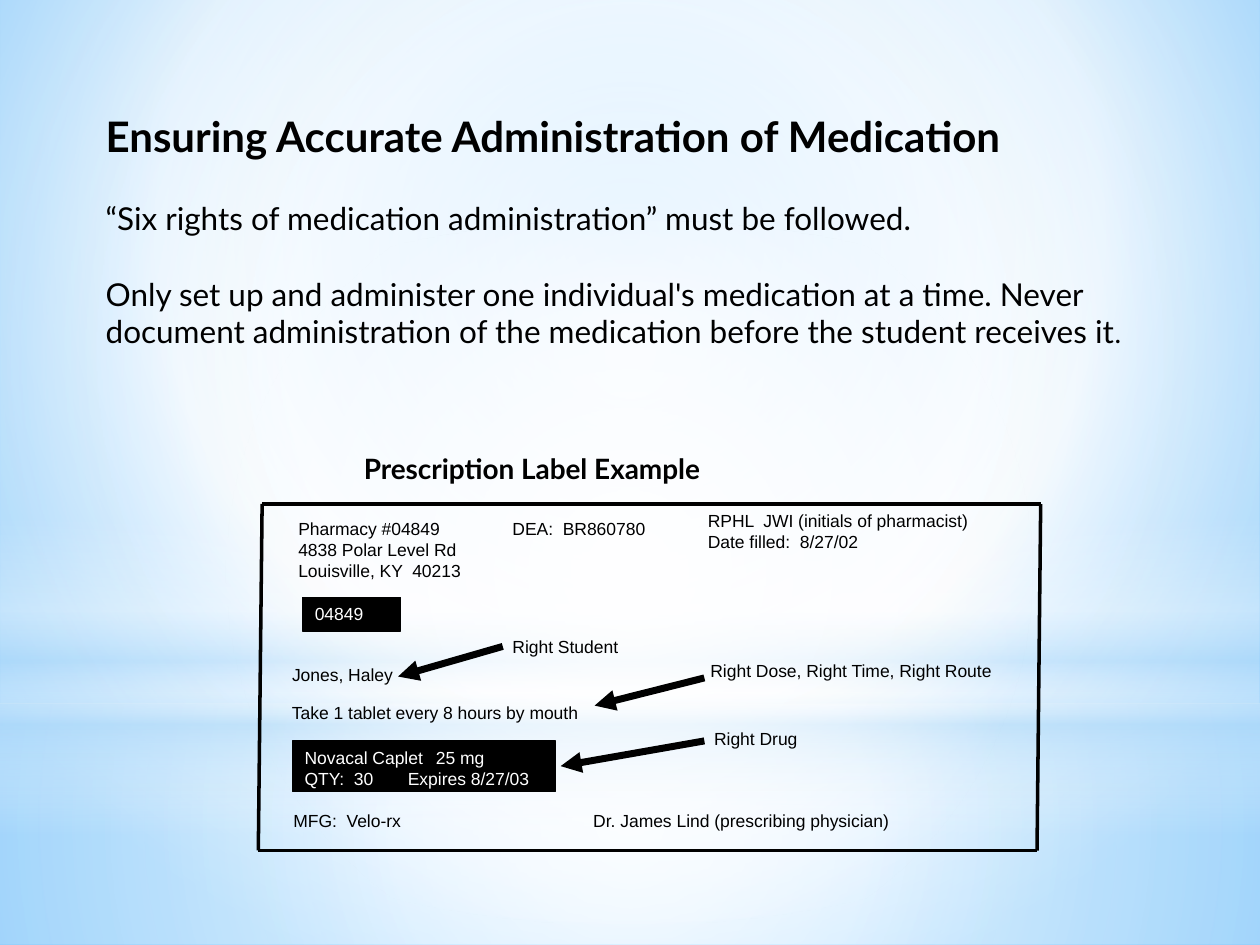
from lxml.etree import SubElement as Sub
from pptx import Presentation
from pptx.dml.color import RGBColor
from pptx.enum.shapes import MSO_CONNECTOR as Connector, MSO_SHAPE as Preset
from pptx.enum.text import MSO_ANCHOR as Anchor, PP_ALIGN as Align
from pptx.oxml.ns import qn
from pptx.util import Pt

rgb = RGBColor.from_string


def blend(owner, stops, focus=None):
    gradient = owner.find(".//" + qn("a:gradFill"))
    for child in list(gradient):
        gradient.remove(child)
    stop_list = Sub(gradient, qn("a:gsLst"))
    for position, color, opacity in stops:
        stop = Sub(stop_list, qn("a:gs"), pos=str(position * 1000))
        tint = Sub(stop, qn("a:srgbClr"), val=color)
        if opacity < 100:
            Sub(tint, qn("a:alpha"), val=str(opacity * 1000))
    if focus:
        circle = Sub(gradient, qn("a:path"), path="circle")
        edges = {side: str(share * 1000) for side, share in zip("ltrb", focus)}
        Sub(circle, qn("a:fillToRect"), **edges)
    else:
        Sub(gradient, qn("a:lin"), ang="5400000", scaled="0")


def write(holder, paragraphs, font="Arial", color="000000"):
    frame = holder.text_frame
    frame.word_wrap = True
    frame.vertical_anchor = Anchor.TOP
    for index, (space, runs) in enumerate(paragraphs):
        paragraph = frame.add_paragraph() if index else frame.paragraphs[0]
        paragraph.alignment = Align.LEFT
        paragraph.space_before = Pt(space)
        for words, size, bold in runs:
            run = paragraph.add_run()
            run.text = words
            run.font.name = font
            run.font.size = Pt(size)
            run.font.bold = bold
            run.font.color.rgb = rgb(color)


prs = Presentation()
prs.slide_width, prs.slide_height = Pt(720), Pt(540)
slide = prs.slides.add_slide(prs.slide_layouts[6])
shapes = slide.shapes

slide.background.fill.gradient()
blend(slide.element, [(0, "9ED5FF", 100), (60, "FFFFFF", 100), (100, "5BB9FF", 100)],
      (20, 10, 20, 60))

center = (50, 50, 50, 50)
glows = [
    (Preset.RECTANGLE, 401.8, 138.2, center,
     [(0, "FFFFFF", 91), (37, "FFFFFF", 76), (100, "B4DCFA", 79)]),
    (Preset.RECTANGLE, 0, 401.8, center,
     [(0, "FFFFFF", 89), (48, "FFFFFF", 62), (100, "B4DCFA", 79)]),
    (Preset.RECTANGLE, 296.6, 180, None,
     [(0, "FFFFFF", 0), (29, "FFFFFF", 30), (45, "B4DCFA", 40),
      (55, "FFFFFF", 26), (65, "B4DCFA", 60), (100, "FFFFFF", 0)]),
    (Preset.OVAL, 126, 401.8, center, [(0, "FFFFFF", 100), (56, "FFFFFF", 0)]),
]
for preset, top, height, focus, stops in glows:
    glow = shapes.add_shape(preset, 0, Pt(top), Pt(720), Pt(height))
    glow.shadow.inherit = False
    glow.line.fill.background()
    glow.fill.gradient()
    blend(glow.element, stops, focus)

message = shapes.add_textbox(Pt(53.3), Pt(59.8), Pt(650), Pt(150))
write(message, [
    (0, [("Ensuring Accurate Administration of Medication", 24, True)]),
    (21.6, [("“Six rights of medication administration” must be followed.", 18, False)]),
    (21.6, [("Only set up and administer one individual's medication at a time. "
             "Never document administration of the medication before the student "
             "receives it", 18, False), (".", 16, False)]),
], "Lato")
label_heading = shapes.add_textbox(Pt(200.8), Pt(254.2), Pt(300), Pt(27))
write(label_heading, [(0, [("Prescription Label Example", 16, True)])], "Lato")

top_left, top_right = (149.8, 288), (594.7, 288)
bottom_left, bottom_right = (147.6, 486), (592.6, 486)
strokes = [
    (bottom_left, bottom_right, 2),
    (top_left, bottom_left, 2),
    (top_left, top_right, 2),
    (top_right, bottom_right, 2),
    ((287.3, 369.4), (227.5, 386.6), 4),
    ((402.5, 387.4), (339.8, 403.2), 4),
    ((402.5, 423.4), (320.4, 437.8), 4),
]
for start, end, weight in strokes:
    stroke = shapes.add_connector(Connector.STRAIGHT, *map(Pt, start + end))
    stroke.line.color.rgb = rgb("000000")
    stroke.line.width = Pt(weight)
    if weight == 4:
        Sub(stroke.line._get_or_add_ln(), qn("a:tailEnd"), type="triangle")
    Sub(stroke.element.spPr, qn("a:effectLst"))

plates = [
    (172.8, 341.3, 56.2, 19.4, ["04849"], []),
    (167, 423.4, 150.5, 28.8,
     ["Novacal Caplet\t25 mg", "QTY:  30\tExpires 8/27/03"], [75, 59]),
]
for left, top, width, height, lines, tabs in plates:
    plate = shapes.add_shape(Preset.RECTANGLE, Pt(left), Pt(top), Pt(width), Pt(height))
    plate.shadow.inherit = False
    plate.fill.solid()
    plate.fill.fore_color.rgb = rgb("000000")
    plate.line.color.rgb = rgb("000000")
    plate.line.width = Pt(0.75)
    write(plate, [(0, [(line, 10, False)]) for line in lines], color="FFFFFF")
    for paragraph, tab in zip(plate.text_frame.paragraphs, tabs):
        tab_list = Sub(paragraph._p.get_or_add_pPr(), qn("a:tabLst"))
        Sub(tab_list, qn("a:tab"), pos=str(Pt(tab)), algn="l")

details = [
    (285.8, 360, 96.5, ["Right Student"]),
    (398.9, 373.7, 187.2, ["Right Dose, Right Time, Right Route"]),
    (401, 412.6, 96.5, ["Right Drug"]),
    (159.8, 375.8, 79.9, ["Jones, Haley"]),
    (163.4, 292.3, 144, ["Pharmacy #04849", "4838 Polar Level Rd", "Louisville, KY  40213"]),
    (285.8, 292.3, 120.2, ["DEA:  BR860780"]),
    (397.4, 288, 179.3, ["RPHL  JWI (initials of pharmacist)", "Date filled:  8/27/02"]),
    (159.8, 397.4, 192.2, ["Take 1 tablet every 8 hours by mouth"]),
    (160.6, 459.4, 96.5, ["MFG:  Velo-rx"]),
    (331.9, 459.4, 187.9, ["Dr. James Lind (prescribing physician)"]),
]
for left, top, width, lines in details:
    detail = shapes.add_textbox(Pt(left), Pt(top), Pt(width), Pt(7.4 + 12 * len(lines)))
    write(detail, [(0, [(line, 10, False)]) for line in lines])

prs.save("out.pptx")
